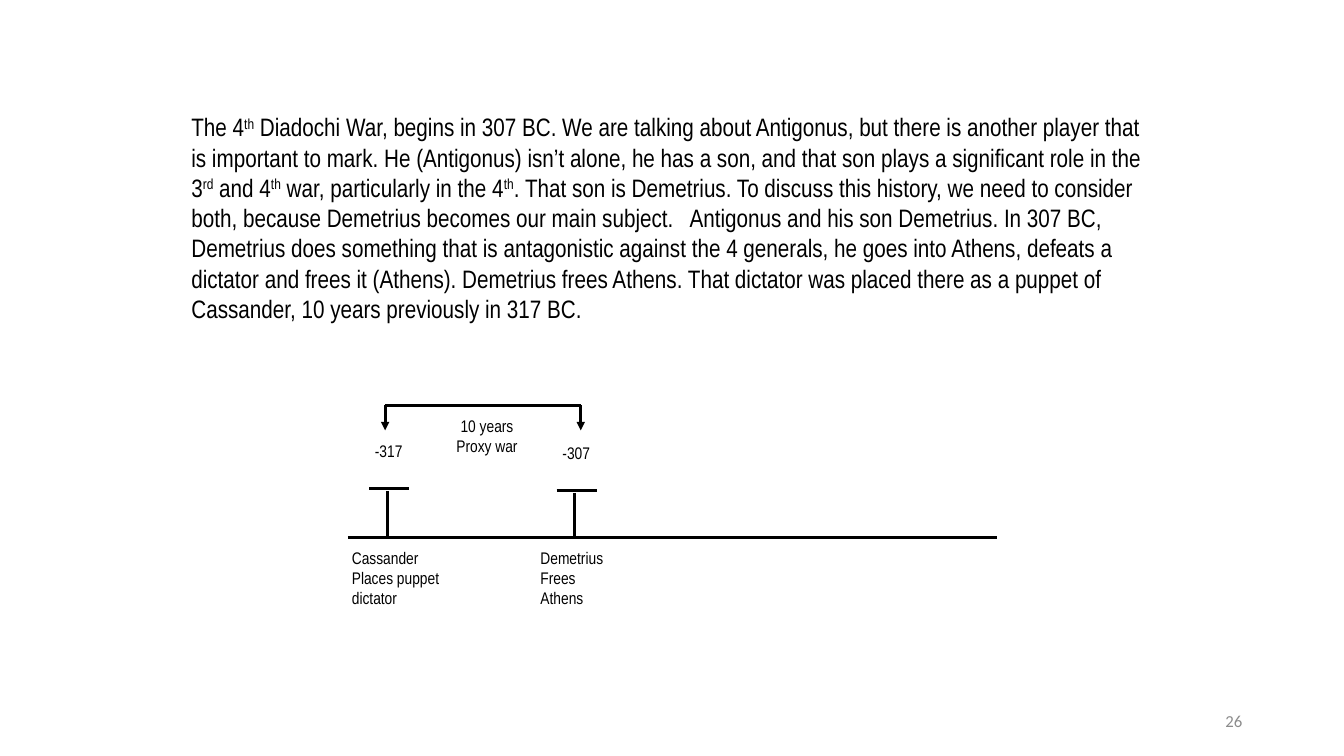
from lxml import etree
from pptx import Presentation
from pptx.dml.color import RGBColor
from pptx.enum.shapes import MSO_CONNECTOR as Connector
from pptx.enum.text import MSO_ANCHOR as Anchor, PP_ALIGN as Align
from pptx.oxml.ns import qn
from pptx.util import Inches, Pt

COLORS = {"ink": "000000", "muted": "8C8C8C"}
BODY = {"name": "Arial Narrow", "size": Pt(18)}
LABEL = {"name": "Arial Narrow", "size": Pt(12)}
NUMBER = {"name": "Calibri", "size": Pt(12)}
TIGHT = 0.04  # inset of the timeline labels
AXIS_Y = 5.33

# Carets enclose superscripts
NARRATIVE = (
    "The 4^th^ Diadochi War, begins in 307 BC. We are talking about Antigonus, "
    "but there is another player that is important to mark. He (Antigonus) isn’t "
    "alone, he has a son, and that son plays a significant role in the 3^rd^ and "
    "4^th^ war, particularly in the 4^th^. That son is Demetrius. To discuss this "
    "history, we need to consider both, because Demetrius becomes our main "
    "subject.   Antigonus and his son Demetrius. In 307 BC, Demetrius does "
    "something that is antagonistic against the 4 generals, he goes into Athens, "
    "defeats a dictator and frees it (Athens). Demetrius frees Athens. That "
    "dictator was placed there as a puppet of Cassander, 10 years previously in "
    "317 BC."
)

# Stem x, top of the cap, bottom of the stem, year, bracket arrow x
EVENTS = [
    (5.7, 4.87, 5.35, "-307", 5.76),
    (3.84, 4.85, AXIS_Y, "-317", 3.82),
]
# Captions under the axis: box and paragraphs
CAPTIONS = [
    ((5.32, 5.39, 0.81, 0.69), ["Demetrius", "Frees", "Athens"]),
    ((3.45, 5.39, 1, 0.87), ["Cassander", "Places puppet dictator"]),
]


def add_text(slide, box, paragraphs, font, align=Align.LEFT, inset=None,
             anchor=Anchor.TOP, color="ink"):
    frame = slide.shapes.add_textbox(*map(Inches, box)).text_frame
    layout = {"word_wrap": True, "vertical_anchor": anchor}
    if inset is not None:
        for side in ("left", "top", "right", "bottom"):
            layout[f"margin_{side}"] = Inches(inset)
    for key, value in layout.items():
        setattr(frame, key, value)
    for index, text in enumerate(paragraphs):
        paragraph = frame.add_paragraph() if index else frame.paragraphs[0]
        paragraph.alignment = align
        for part, piece in enumerate(text.split("^")):
            run = paragraph.add_run()
            run.text = piece
            for key, value in font.items():
                setattr(run.font, key, value)
            run.font.color.rgb = RGBColor.from_string(COLORS[color])
            if part % 2:
                run.font._element.set("baseline", "30000")


def add_line(slide, start, end, arrow=False):
    line = slide.shapes.add_connector(
        Connector.STRAIGHT, *map(Inches, (*start, *end)))
    line.line.width = Pt(2)
    line.line.color.rgb = RGBColor.from_string(COLORS["ink"])
    if arrow:
        outline = line.line._get_or_add_ln()
        etree.SubElement(outline, qn("a:tailEnd"), type="triangle")
    etree.SubElement(line._element.spPr, qn("a:effectLst"))


def add_event(slide, x, cap_y, stem_end, year):
    add_line(slide, (x, cap_y + 0.02), (x, stem_end))
    add_line(slide, (x - 0.18, cap_y), (x + 0.22, cap_y))
    add_text(slide, (x - 0.33, cap_y - 0.52, 0.69, 0.56), [year], LABEL,
             Align.CENTER, TIGHT)


def add_bracket(slide, arrow_xs, top, bottom):
    add_line(slide, (min(arrow_xs), top), (max(arrow_xs), top))
    for x in arrow_xs:
        add_line(slide, (x, top), (x, bottom), arrow=True)


def main():
    deck = Presentation()
    deck.slide_width, deck.slide_height = Inches(13.33), Inches(7.5)
    slide = deck.slides.add_slide(deck.slide_layouts[6])

    # Slide number and narrative
    add_text(slide, (9.42, 6.95, 3, 0.4), ["26"], NUMBER, Align.RIGHT,
             anchor=Anchor.MIDDLE, color="muted")
    add_text(slide, (1.8, 1.06, 9.74, 2.25), [NARRATIVE], BODY)

    # Timeline with its events
    add_line(slide, (3.45, AXIS_Y), (9.89, AXIS_Y))
    for *event, _ in EVENTS:
        add_event(slide, *event)
    for box, paragraphs in CAPTIONS:
        add_text(slide, box, paragraphs, LABEL, inset=TIGHT)

    # Span between the events
    add_text(slide, (4.32, 4.08, 1.02, 0.62), ["10 years", "Proxy war"], LABEL,
             Align.CENTER, TIGHT)
    add_bracket(slide, [event[-1] for event in EVENTS], 4.02, 4.27)

    deck.save("out.pptx")


if __name__ == "__main__":
    main()
